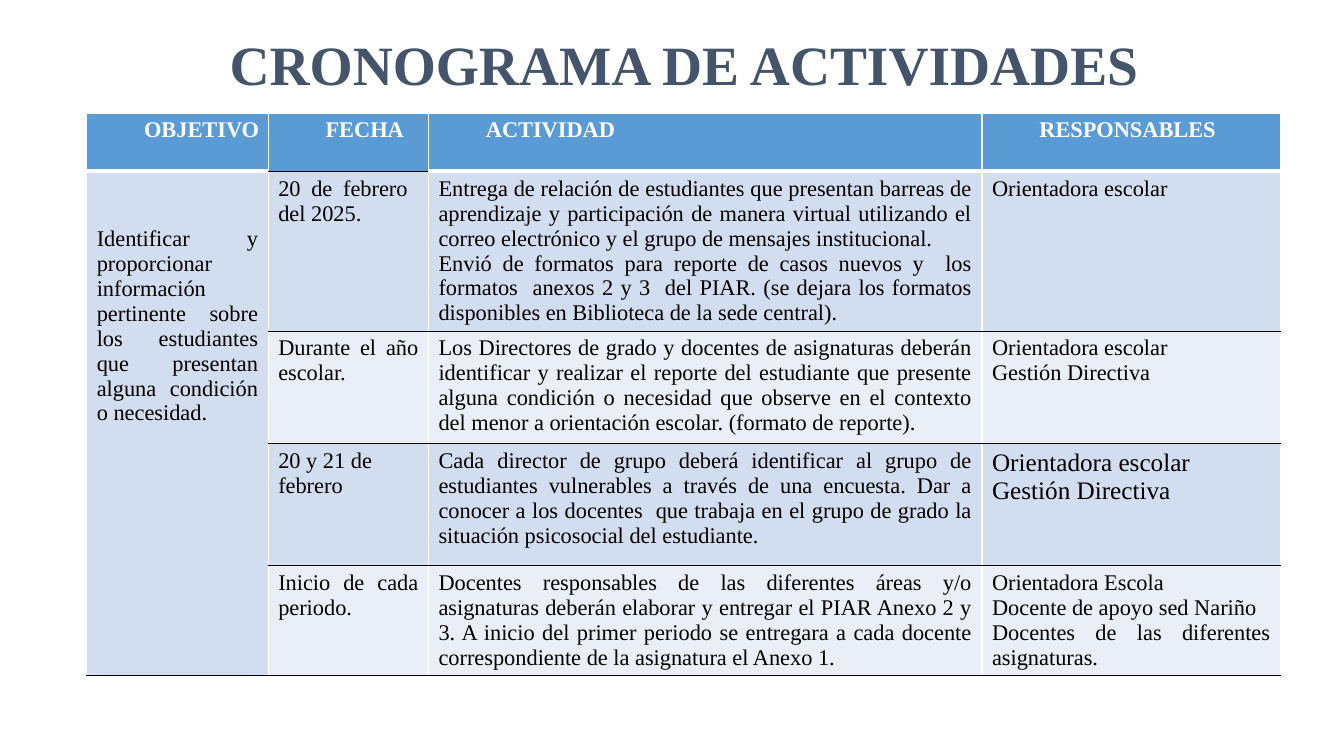
from lxml import etree
from pptx import Presentation
from pptx.dml.color import RGBColor
from pptx.enum.text import MSO_ANCHOR, PP_ALIGN
from pptx.oxml.ns import qn
from pptx.util import Inches, Pt

LEFT, CENTER, JUSTIFY = PP_ALIGN.LEFT, PP_ALIGN.CENTER, PP_ALIGN.JUSTIFY
TOP, MIDDLE = MSO_ANCHOR.TOP, MSO_ANCHOR.MIDDLE
FONT = "Times New Roman"
COLORS = {
    "title": "44546A",
    "header": "5B9BD5",
    "odd": "D2DEEF",
    "even": "EAEFF7",
    "white": "FFFFFF",
    "black": "000000",
}
COLUMN_WIDTHS = [1.8, 1.59, 5.49, 2.96]
ROW_HEIGHTS = [0.57, 1.38, 1.12, 1.21, 1.06]
HEADERS = ["OBJETIVO", "FECHA", "ACTIVIDAD", "RESPONSABLES"]
OBJECTIVE = (
    "Identificar y proporcionar información pertinente sobre los estudiantes "
    "que presentan alguna condición o necesidad."
)
ACTIVITIES = [
    (
        "20 de febrero  del 2025.",
        "Entrega de relación de estudiantes que presentan barreas de aprendizaje y "
        "participación de manera virtual utilizando el correo electrónico y el grupo "
        "de mensajes institucional.\n"
        "Envió de formatos para reporte de casos nuevos y  los formatos  anexos 2 y 3  "
        "del PIAR. (se dejara los formatos disponibles en Biblioteca de la sede central).",
        "Orientadora escolar",
    ),
    (
        "Durante el año escolar.",
        "Los Directores de grado y docentes de asignaturas deberán identificar y "
        "realizar el reporte del estudiante que presente alguna condición o necesidad "
        "que observe en el contexto del menor a orientación escolar. (formato de reporte).",
        "Orientadora escolar\nGestión Directiva",
    ),
    (
        "20 y 21 de febrero",
        "Cada director de grupo deberá identificar al grupo de estudiantes vulnerables "
        "a través de una encuesta. Dar a conocer a los docentes  que trabaja en el grupo "
        "de grado la situación psicosocial del estudiante.",
        "Orientadora escolar\nGestión Directiva",
    ),
    (
        "Inicio de cada periodo.",
        "Docentes responsables de las diferentes áreas y/o asignaturas deberán elaborar "
        "y entregar el PIAR Anexo 2 y 3. A inicio del primer periodo se entregara a cada "
        "docente correspondiente de la asignatura el Anexo 1.",
        "Orientadora Escola\nDocente de apoyo sed Nariño\n"
        "Docentes de las diferentes asignaturas.",
    ),
]


def write(frame, text, size=16, color="black", bold=False, align=JUSTIFY, spacing=1.0, indent=0):
    frame.word_wrap = True
    for index, line in enumerate(text.split("\n")):
        para = frame.add_paragraph() if index else frame.paragraphs[0]
        para.alignment = align
        para.line_spacing = spacing
        para.space_before = para.space_after = Pt(0)
        if indent:
            para._p.get_or_add_pPr().set("marL", str(Inches(indent)))
        span = para.add_run()
        span.text = line
        span.font.name = FONT
        span.font.size = Pt(size)
        span.font.bold = bold
        span.font.color.rgb = RGBColor.from_string(COLORS[color])


def style_cell(cell, fill, top, bottom):
    cell.fill.solid()
    cell.fill.fore_color.rgb = RGBColor.from_string(COLORS[fill])
    side = ("white", 1)
    properties = cell._tc.get_or_add_tcPr()
    edges = {"a:lnL": side, "a:lnR": side, "a:lnT": top, "a:lnB": bottom}
    for position, (tag, (color, width)) in enumerate(edges.items()):
        line = etree.Element(qn(tag), w=str(Pt(width)))
        solid = etree.SubElement(line, qn("a:solidFill"))
        etree.SubElement(solid, qn("a:srgbClr"), val=COLORS[color])
        properties.insert(position, line)


deck = Presentation()
deck.slide_width, deck.slide_height = Inches(13.33), Inches(7.5)
page = deck.slides.add_slide(deck.slide_layouts[5])

title = page.shapes.title
title.left, title.top = Inches(1.91), Inches(0.56)
title.width, title.height = Inches(9.75), Inches(0.88)
title.text_frame.vertical_anchor = MIDDLE
title.text_frame.margin_bottom = Inches(0.7)
write(title.text_frame, "CRONOGRAMA DE ACTIVIDADES", size=39.6, color="title",
      bold=True, align=CENTER, spacing=0.9)

schedule = page.shapes.add_table(
    len(ROW_HEIGHTS), len(COLUMN_WIDTHS), Inches(0.86), Inches(1.13),
    Inches(sum(COLUMN_WIDTHS)), Inches(sum(ROW_HEIGHTS))).table
for column, width in zip(schedule.columns, COLUMN_WIDTHS):
    column.width = Inches(width)
for row, height in zip(schedule.rows, ROW_HEIGHTS):
    row.height = Inches(height)

thin, thick, rule = ("white", 1), ("white", 3), ("black", 0.25)

for column, header in enumerate(HEADERS):
    cell = schedule.cell(0, column)
    cell.margin_left = cell.margin_right = Inches(0.07)
    cell.margin_top = cell.margin_bottom = 0
    write(cell.text_frame, header, color="white", bold=True, spacing=1.15, indent=0.5)
    style_cell(cell, "header", thin, rule if header == "FECHA" else thick)

objective = schedule.cell(1, 0)
objective.merge(schedule.cell(len(ACTIVITIES), 0))
objective.vertical_anchor = TOP
objective.margin_top = Inches(0.55)
write(objective.text_frame, OBJECTIVE)
style_cell(objective, "odd", thick, rule)

for row, activity in enumerate(ACTIVITIES, 1):
    for column, text in enumerate(activity, 1):
        cell = schedule.cell(row, column)
        large = row == 3 and column == 3
        ragged = row == 3 and column == 1
        write(cell.text_frame, text, size=18 if large else 16, align=LEFT if ragged else JUSTIFY)
        top = thick if row == 1 and column > 1 else rule
        style_cell(cell, "odd" if row % 2 else "even", top, rule)

deck.save("out.pptx")
